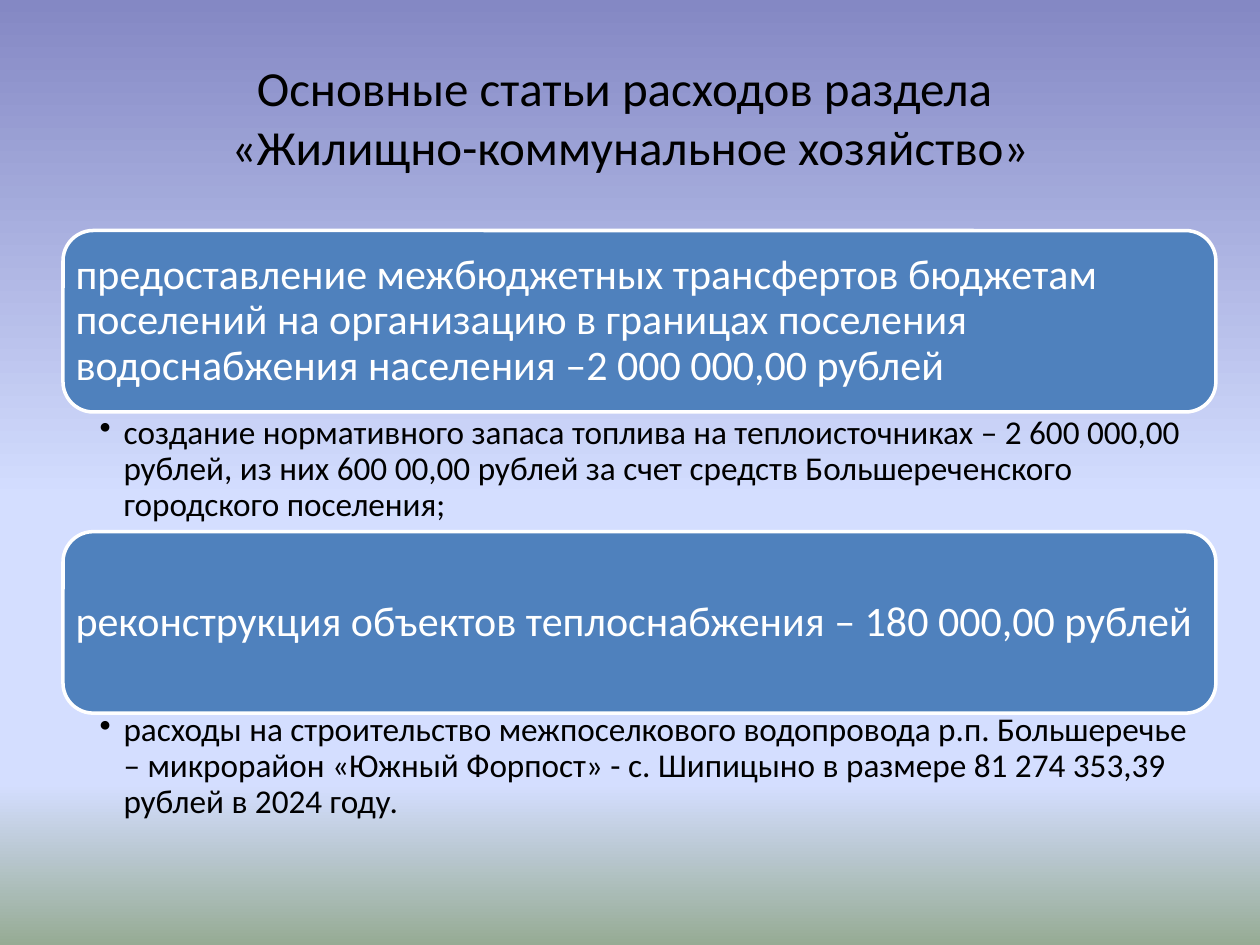
from lxml.etree import SubElement
from pptx import Presentation
from pptx.dml.color import RGBColor
from pptx.enum.shapes import MSO_SHAPE
from pptx.enum.text import MSO_ANCHOR, PP_ALIGN
from pptx.oxml.ns import qn
from pptx.util import Inches, Pt

COLORS = {
    "sky": "8488C4",
    "haze": "D4DEFF",
    "grass": "96AB94",
    "band": "4F81BD",
    "white": "FFFFFF",
    "black": "000000",
}
BACKDROP = [(0, "sky"), (53, "haze"), (83, "haze"), (100, "grass")]
LEFT, WIDTH = 0.5, 9.15
BAND_HEIGHT, DETAIL_HEIGHT = 1.44, 0.95
TITLE = "Основные статьи расходов раздела \v«Жилищно-коммунальное хозяйство»"
EXPENSES = [
    (
        1.83,
        "предоставление межбюджетных трансфертов бюджетам поселений на организацию "
        "в границах поселения водоснабжения населения –2 000 000,00 рублей",
        3.27,
        "создание нормативного запаса топлива на теплоисточниках – 2 600 000,00 рублей, "
        "из них 600 00,00 рублей за счет средств Большереченского городского поселения;",
    ),
    (
        4.22,
        "реконструкция объектов теплоснабжения – 180 000,00 рублей",
        5.63,
        "расходы на строительство межпоселкового водопровода р.п. Большеречье – "
        "микрорайон «Южный Форпост» - с. Шипицыно в размере 81 274 353,39 рублей в 2024 году.",
    ),
]


class ExpenseSlide:
    """Draws the parts of an expense slide in one shared style."""

    font = "Calibri"

    def __init__(self, deck):
        self.slide = deck.slides.add_slide(deck.slide_layouts[6])

    def color(self, name):
        return RGBColor.from_string(COLORS[name])

    def backdrop(self, stops):
        fill = self.slide.background.fill
        fill.gradient()
        fill.gradient_angle = 270
        stop_list = self.slide.element.find(".//" + qn("a:gsLst"))
        for stop in list(stop_list):
            stop_list.remove(stop)
        for percent, name in stops:
            stop = SubElement(stop_list, qn("a:gs"), pos=str(percent * 1000))
            SubElement(stop, qn("a:srgbClr"), val=COLORS[name])

    def wording(self, holder, content, size, color, frame_format, paragraph_format):
        frame = holder.text_frame
        paragraph = frame.paragraphs[0]
        paragraph.text = content
        for target, values in (
            (frame, {"word_wrap": True, **frame_format}),
            (paragraph, paragraph_format),
        ):
            for attribute, value in values.items():
                setattr(target, attribute, value)
        for run in paragraph.runs:
            run.font.name = self.font
            run.font.size = Pt(size)
            run.font.color.rgb = self.color(color)
        return paragraph

    def text_box(self, left, top, width, height):
        return self.slide.shapes.add_textbox(
            Inches(left), Inches(top), Inches(width), Inches(height)
        )

    def title(self, content):
        heading = self.text_box(LEFT, 0.3, 9, 1.25)
        self.wording(
            heading, content, 28, "black",
            {"vertical_anchor": MSO_ANCHOR.MIDDLE},
            {"alignment": PP_ALIGN.CENTER},
        )

    def band(self, top, content):
        band = self.slide.shapes.add_shape(
            MSO_SHAPE.ROUNDED_RECTANGLE,
            Inches(LEFT), Inches(top), Inches(WIDTH), Inches(BAND_HEIGHT),
        )
        band.shadow.inherit = False
        band.fill.solid()
        band.fill.fore_color.rgb = self.color("band")
        band.line.color.rgb = self.color("white")
        band.line.width = Pt(2)
        self.wording(
            band, content, 24, "white",
            {
                "vertical_anchor": MSO_ANCHOR.MIDDLE,
                "margin_left": Inches(0.03),
                "margin_right": Inches(0.03),
            },
            {"alignment": PP_ALIGN.LEFT, "line_spacing": 0.9},
        )

    def detail(self, top, content):
        detail = self.text_box(LEFT, top, WIDTH, DETAIL_HEIGHT)
        paragraph = self.wording(
            detail, content, 19, "black",
            {
                "margin_left": Inches(0.29),
                "margin_right": Inches(0.19),
                "margin_top": Inches(0.03),
                "margin_bottom": Inches(0.03),
            },
            {"level": 1, "line_spacing": 0.9},
        )
        properties = paragraph._p.get_or_add_pPr()
        properties.set("marL", str(Inches(0.19)))
        properties.set("indent", str(Inches(-0.19)))
        SubElement(properties, qn("a:buChar"), char="•")


def main():
    deck = Presentation()
    deck.slide_width, deck.slide_height = Inches(10), Inches(7.5)
    page = ExpenseSlide(deck)
    page.backdrop(BACKDROP)
    page.title(TITLE)
    for band_top, expense, detail_top, explanation in EXPENSES:
        page.band(band_top, expense)
        page.detail(detail_top, explanation)
    deck.save("out.pptx")


if __name__ == "__main__":
    main()
